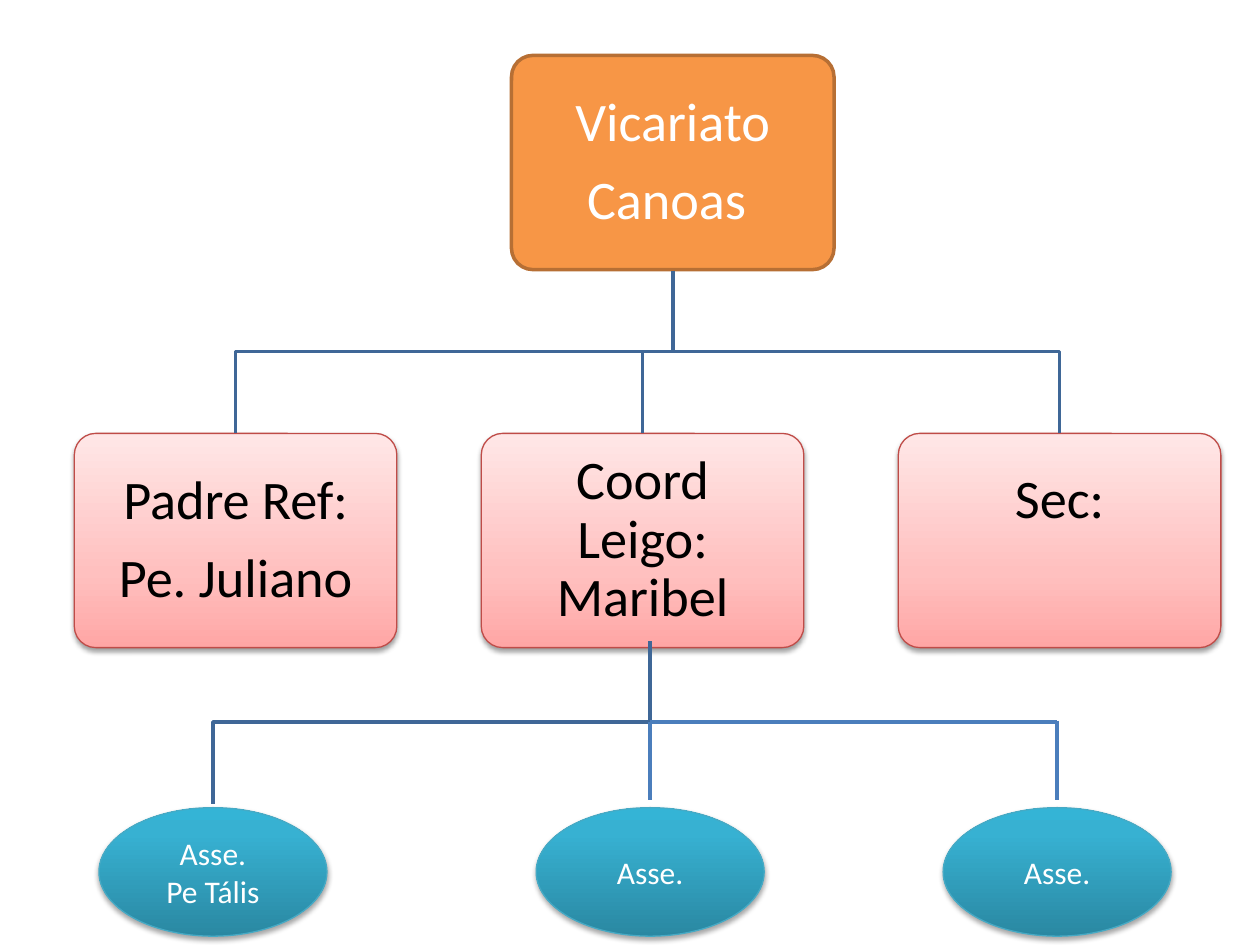
"""Organisation chart of a vicariate: head, three roles and three advisers."""
from lxml.etree import SubElement
from pptx import Presentation
from pptx.dml.color import RGBColor as RGB
from pptx.enum.shapes import MSO_CONNECTOR as LINK, MSO_SHAPE as SHAPE
from pptx.enum.text import MSO_ANCHOR as ANCHOR, PP_ALIGN as ALIGN
from pptx.oxml.ns import qn
from pptx.util import Inches, Pt

COLORS = {
    "head": "F79646", "head_edge": "B76F34",
    "role_edge": "BF4C48", "adviser_edge": "46AAC5",
    "branch": "3F6797", "link": "4B7EBC",
    "light": "FFFFFF", "dark": "000000",
}
GRADIENTS = {
    "role": [(0, "FFA6A5"), (35, "FFC0BF"), (100, "FFE7E7")],
    "adviser": [(0, "2A88A2"), (80, "37B1D2"), (100, "34B4D6")],
}
SHADOWS = {"role": (38, 1.6), "adviser": (35, 1.8)}

deck = Presentation()
deck.slide_width, deck.slide_height = Inches(10), Inches(7.5)
COL, ROW = deck.slide_width // 100, deck.slide_height // 75
shapes = deck.slides.add_slide(deck.slide_layouts[6]).shapes


def write(shape, text, size, color, leading=1.0, gap=0, inset=0.1, bottom=0.05):
    frame = shape.text_frame
    frame.word_wrap = True
    frame.vertical_anchor = ANCHOR.MIDDLE
    frame.margin_left = frame.margin_right = Inches(inset)
    frame.margin_top, frame.margin_bottom = Inches(min(inset, 0.18)), Inches(bottom)
    if inset == 0.1:
        frame.margin_top = Inches(0.05)
    for index, line in enumerate(text.split("\n")):
        paragraph = frame.paragraphs[0] if index == 0 else frame.add_paragraph()
        paragraph.alignment = ALIGN.CENTER
        paragraph.line_spacing = leading
        paragraph.space_before = Pt(gap if index else 0)
        run = paragraph.add_run()
        run.text = line
        run.font.name, run.font.size = "Calibri", Pt(size)
        run.font.color.rgb = RGB.from_string(COLORS[color])


def add_node(kind, geometry, left, top, width, height):
    node = shapes.add_shape(geometry, round(left * COL), round(top * ROW),
                            round(width * COL), round(height * ROW))
    node.line.color.rgb = RGB.from_string(COLORS[kind + "_edge"])
    node.line.width = Pt(2 if kind == "head" else 0.75)
    node.shadow.inherit = False
    if geometry == SHAPE.ROUNDED_RECTANGLE:
        node.adjustments[0] = 0.1
    if kind == "head":
        node.fill.solid()
        node.fill.fore_color.rgb = RGB.from_string(COLORS[kind])
        return node
    node.fill.gradient()
    node.fill.gradient_angle = 90
    properties = node._element.spPr
    stops = properties.find(".//" + qn("a:gsLst"))
    stops.clear()
    for position, color in GRADIENTS[kind]:
        stop = SubElement(stops, qn("a:gs"), pos=str(position * 1000))
        SubElement(stop, qn("a:srgbClr"), val=color)
    opacity, distance = SHADOWS[kind]
    shadow = SubElement(properties.find(qn("a:effectLst")), qn("a:outerShdw"),
                        blurRad=str(Pt(3.1)), dist=str(Pt(distance)),
                        dir="5400000", rotWithShape="0")
    tint = SubElement(shadow, qn("a:srgbClr"), val=COLORS["dark"])
    SubElement(tint, qn("a:alpha"), val=str(opacity * 1000))
    return node


BOX_WIDTH, BOX_HEIGHT, ROLE_TOP = 25.6, 17, 34.4
OVAL_WIDTH, OVAL_HEIGHT = 18.1, 10.2
HEAD_CENTER, HEAD_TOP = 53.4, 4.4
boxes = [
    ("head", HEAD_CENTER, HEAD_TOP, "Vicariato\nCanoas ", "light", 0.18),
    ("role", 18.7, ROLE_TOP, "Padre Ref:\nPe. Juliano", "dark", 0.18),
    ("role", 51, ROLE_TOP, "Coord Leigo: Maribel", "dark", 0.18),
    ("role", 84.1, ROLE_TOP, "Sec:", "dark", 0.8),
]
for kind, center, top, text, color, bottom in boxes:
    box = add_node(kind, SHAPE.ROUNDED_RECTANGLE, center - BOX_WIDTH / 2, top,
                   BOX_WIDTH, BOX_HEIGHT)
    write(box, text, 31, color, leading=0.9, gap=11, inset=0.18, bottom=bottom)

ADVISER_CENTERS = [16.9, 51.6, 83.9]
FORK = 57.3
branches = [(HEAD_CENTER, 21.5, 27.9, center, ROLE_TOP) for _, center, *_ in boxes[1:]]
branches.append((ADVISER_CENTERS[1], 50.9, FORK, ADVISER_CENTERS[0], 63.8))
for start, top, bend, end, bottom in branches:
    corners = [(round(x * COL), round(y * ROW))
               for x, y in [(start, top), (start, bend), (end, bend), (end, bottom)]]
    outline = shapes.build_freeform(*corners[0])
    outline.add_line_segments(corners[1:], close=False)
    branch = outline.convert_to_shape()
    branch.fill.background()
    branch.line.color.rgb = RGB.from_string(COLORS["branch"])
    branch.line.width = Pt(2)
    branch.shadow.inherit = False

_, middle, right = ADVISER_CENTERS
for x1, y1, x2, y2 in [(middle, FORK, middle, 63.5), (middle, FORK, right, FORK),
                       (right, FORK - 0.1, right, 63.5)]:
    link = shapes.add_connector(LINK.STRAIGHT, round(x1 * COL), round(y1 * ROW),
                                round(x2 * COL), round(y2 * ROW))
    link.line.color.rgb = RGB.from_string(COLORS["link"])
    link.line.width = Pt(2)
    SubElement(link._element.spPr, qn("a:effectLst"))

advisers = ["Asse.\nPe Tális", "Asse.", "Asse."]
for center, text in zip(ADVISER_CENTERS, advisers):
    oval = add_node("adviser", SHAPE.OVAL, center - OVAL_WIDTH / 2, 64.1,
                    OVAL_WIDTH, OVAL_HEIGHT)
    write(oval, text, 18, "light")

deck.save("out.pptx")
